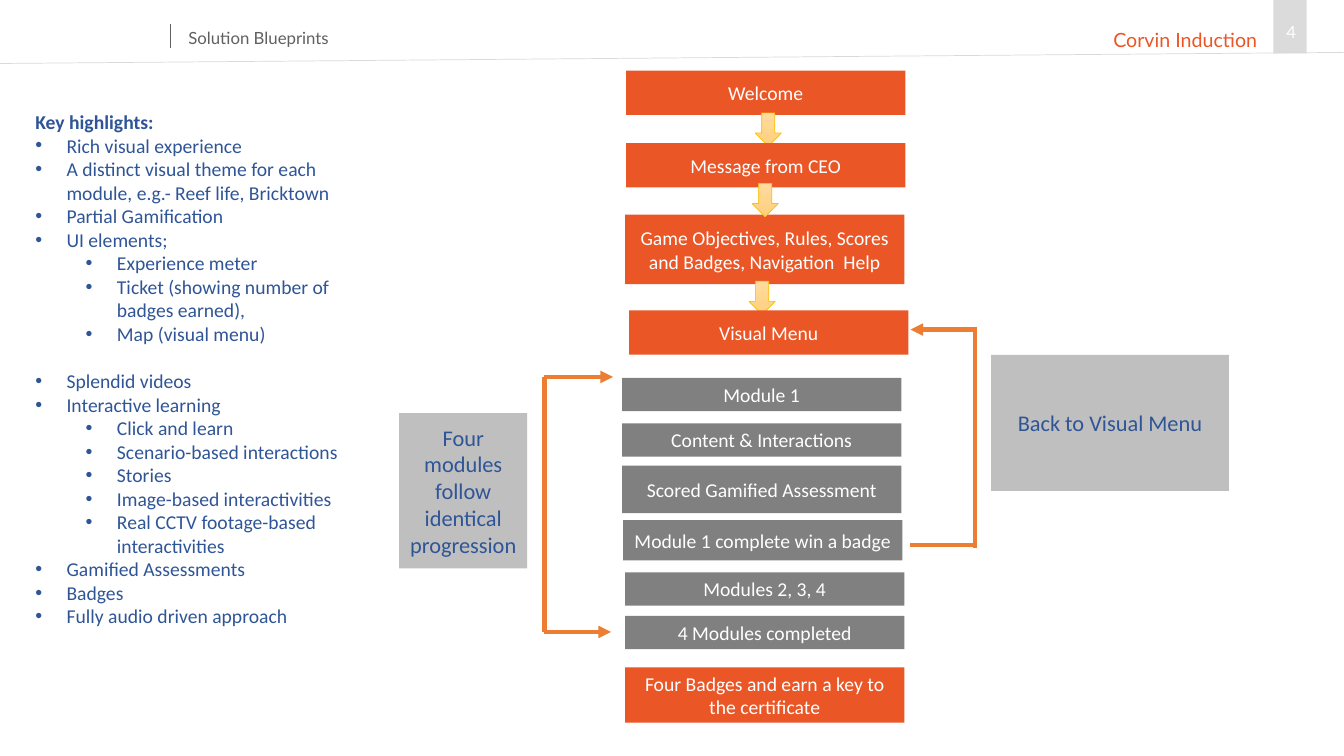
from dataclasses import dataclass
from lxml.etree import SubElement
from pptx import Presentation
from pptx.dml.color import RGBColor
from pptx.enum.shapes import MSO_CONNECTOR, MSO_SHAPE
from pptx.enum.text import MSO_ANCHOR, MSO_AUTO_SIZE, PP_ALIGN
from pptx.oxml.ns import qn
from pptx.util import Inches, Pt


@dataclass(frozen=True)
class Theme:
    orange: str = "EB5626"
    gray: str = "808080"
    pale: str = "BFBFBF"
    tab: str = "DBDBDB"
    rule: str = "D9D9D9"
    slate: str = "606060"
    blue: str = "2F5597"
    white: str = "FFFFFF"
    route: str = "ED7D31"
    gold: str = "FFC000"
    glow: tuple = ("FFDB9E", "FFD07C")
    head: str = "Lato"
    body: str = "Calibri"
    small: int = 12
    base: int = 14
    large: int = 16


THEME = Theme()

# text, level (0 heading, 1 and 2 bullets), points of space before
NOTES = [
    ("Key highlights:", 0, 0),
    ("Rich visual experience", 1, 0),
    ("A distinct visual theme for each module, e.g.- Reef life, Bricktown", 1, 0),
    ("Partial Gamification", 1, 0),
    ("UI elements;", 1, 0),
    ("Experience meter", 2, 0),
    ("Ticket (showing number of badges earned),", 2, 0),
    ("Map (visual menu)", 2, 0),
    ("Splendid videos", 1, 17),
    ("Interactive learning", 1, 0),
    ("Click and learn", 2, 0),
    ("Scenario-based interactions", 2, 0),
    ("Stories", 2, 0),
    ("Image-based interactivities", 2, 0),
    ("Real CCTV footage-based interactivities", 2, 0),
    ("Gamified Assessments", 1, 0),
    ("Badges", 1, 0),
    ("Fully audio driven approach", 1, 0),
]

# text, left, top, height
STEPS = [
    ("Module 1", 6.17, 3.75, 0.33),
    ("Content & Interactions", 6.17, 4.2, 0.33),
    ("Scored Gamified Assessment", 6.17, 4.62, 0.47),
    ("Module 1 complete win a badge", 6.18, 5.16, 0.4),
    ("Modules 2, 3, 4", 6.2, 5.68, 0.33),
    ("4 Modules completed", 6.2, 6.11, 0.33),
]

# start x, start y, end x, end y, arrowhead
ROUTES = [
    (9.67, 3.24, 9.67, 5.44, False),
    (9.67, 3.27, 9.03, 3.27, True),
    (9.67, 5.41, 9.03, 5.41, False),
    (5.4, 3.74, 5.4, 6.27, False),
    (5.4, 3.74, 6.08, 3.74, True),
    (5.4, 6.27, 6.06, 6.27, True),
]


def rgb(code):
    return RGBColor.from_string(code)


def write(par, text, size=THEME.base, color=THEME.white, font=THEME.body,
          bold=False, align=PP_ALIGN.LEFT):
    par.alignment = align
    run = par.add_run()
    run.text = text
    run.font.size = Pt(size)
    run.font.name = font
    run.font.bold = bold
    run.font.color.rgb = rgb(color)


def place(shape, left, top, width, height):
    shape.left, shape.top = Inches(left), Inches(top)
    shape.width, shape.height = Inches(width), Inches(height)


def fit(frame, anchor=MSO_ANCHOR.TOP):
    frame.word_wrap = True
    frame.auto_size = MSO_AUTO_SIZE.NONE
    frame.vertical_anchor = anchor


def add_label(slide, text, left, top, width, height, color, anchor=MSO_ANCHOR.TOP):
    frame = slide.shapes.add_textbox(
        Inches(left), Inches(top), Inches(width), Inches(height)).text_frame
    fit(frame, anchor)
    write(frame.paragraphs[0], text, size=THEME.small, color=color, font=THEME.head)


def add_shape(slide, kind, left, top, width, height):
    shape = slide.shapes.add_shape(
        kind, Inches(left), Inches(top), Inches(width), Inches(height))
    shape.shadow.inherit = False
    return shape


def add_box(slide, text, left, top, height, width=2.77, fill=THEME.orange, **form):
    box = add_shape(slide, MSO_SHAPE.RECTANGLE, left, top, width, height)
    box.fill.solid()
    box.fill.fore_color.rgb = rgb(fill)
    box.line.fill.background()
    if text:
        fit(box.text_frame, MSO_ANCHOR.MIDDLE)
        write(box.text_frame.paragraphs[0], text, align=PP_ALIGN.CENTER, **form)


def add_arrow(slide, left, top):
    arrow = add_shape(slide, MSO_SHAPE.DOWN_ARROW, left, top, 0.26, 0.33)
    arrow.fill.gradient()
    arrow.fill.gradient_angle = 270
    for stop, code in zip(arrow.fill.gradient_stops, THEME.glow):
        stop.color.rgb = rgb(code)
    arrow.line.color.rgb = rgb(THEME.gold)
    arrow.line.width = Pt(0.5)


def add_line(slide, x1, y1, x2, y2, head=False, color=THEME.route, width=3):
    line = slide.shapes.add_connector(
        MSO_CONNECTOR.STRAIGHT, Inches(x1), Inches(y1), Inches(x2), Inches(y2))
    line.line.color.rgb = rgb(color)
    line.line.width = Pt(width)
    if head:
        SubElement(line.line._get_or_add_ln(), qn("a:tailEnd"), type="triangle")
    SubElement(line._element.spPr, qn("a:effectLst"))


def set_bullet(par, level):
    """Set the indent and bullet; level 0 is a plain heading."""
    props = par._p.get_or_add_pPr()
    hang = Inches(0.31) if level else 0
    left = hang + Inches(0.5) * max(level - 1, 0)
    props.set("marL", str(left))
    props.set("indent", str(-hang))
    if level:
        par.level = level - 1
        SubElement(props, qn("a:buFont"), typeface="Arial")
        SubElement(props, qn("a:buChar"), char="•")
    else:
        SubElement(props, qn("a:buNone"))


def fill_notes(body):
    place(body, 0.25, 1.04, 3.41, 5.28)
    frame = body.text_frame
    fit(frame)
    for index, (text, level, gap) in enumerate(NOTES):
        par = frame.add_paragraph() if index else frame.paragraphs[0]
        set_bullet(par, level)
        par.space_before = Pt(gap)
        write(par, text, color=THEME.blue, bold=level == 0)


def add_header(slide):
    add_box(slide, "", 12.63, 0, 0.53, width=0.33, fill=THEME.tab)
    add_line(slide, 13.33, 0.52, 0, 0.63, color=THEME.rule, width=0.5)
    add_line(slide, 1.69, 0.24, 1.69, 0.48, color=THEME.slate, width=0.5)
    add_label(slide, "Solution Blueprints", 1.77, 0.23, 3.73, 0.3, THEME.slate)
    add_label(slide, "4", 12.66, 0.12, 0.37, 0.4, THEME.white, MSO_ANCHOR.MIDDLE)
    title = slide.shapes.title
    place(title, 8.84, 0.23, 3.73, 0.34)
    fit(title.text_frame)
    write(title.text_frame.paragraphs[0], "Corvin Induction", color=THEME.orange,
          font=THEME.head, align=PP_ALIGN.RIGHT)


def add_flow(slide):
    add_box(slide, "Welcome", 6.21, 0.7, 0.44)
    add_arrow(slide, 7.49, 1.12)
    add_box(slide, "Message from CEO", 6.21, 1.42, 0.44)
    add_box(slide, "Game Objectives, Rules, Scores and Badges, Navigation  Help",
            6.2, 2.13, 0.69)
    add_arrow(slide, 7.46, 1.82)
    add_arrow(slide, 7.43, 2.79)
    add_box(slide, "Visual Menu", 6.24, 3.08, 0.44)
    for step in STEPS:
        add_box(slide, *step, fill=THEME.gray)
    add_box(slide, "Four Badges and earn a key to the certificate", 6.2, 6.62, 0.55)


def main():
    deck = Presentation()
    deck.slide_width, deck.slide_height = Inches(13.33), Inches(7.5)
    slide = deck.slides.add_slide(deck.slide_layouts[1])
    add_header(slide)
    fill_notes(slide.placeholders[1])
    add_flow(slide)
    side = dict(fill=THEME.pale, size=THEME.large, color=THEME.blue)
    add_box(slide, "Four modules follow identical progression",
            3.96, 4.1, 1.54, width=1.27, **side)
    add_box(slide, "Back to Visual Menu", 9.83, 3.52, 1.35, width=2.36, **side)
    for route in ROUTES:
        add_line(slide, *route)
    deck.save("out.pptx")


if __name__ == "__main__":
    main()
